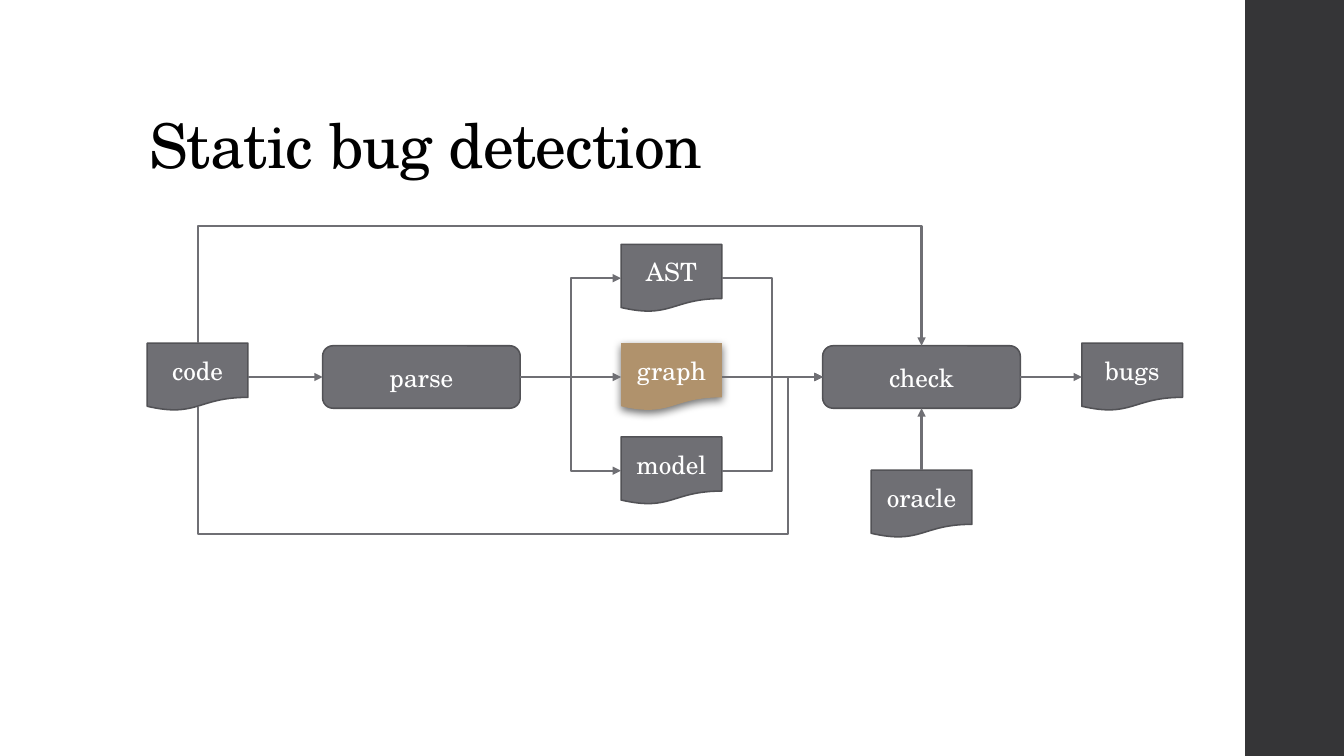
from pptx import Presentation
from pptx.dml.color import RGBColor
from pptx.enum.shapes import MSO_CONNECTOR, MSO_SHAPE
from pptx.enum.text import MSO_ANCHOR, PP_ALIGN
from pptx.oxml import parse_xml
from pptx.oxml.ns import nsdecls, qn
from pptx.util import Inches, Pt

STRAIGHT, ELBOW = MSO_CONNECTOR.STRAIGHT, MSO_CONNECTOR.ELBOW
DOCUMENT, PROCESS = MSO_SHAPE.FLOWCHART_DOCUMENT, MSO_SHAPE.ROUNDED_RECTANGLE
BAND = MSO_SHAPE.RECTANGLE
CENTER, MIDDLE, BOTTOM_ANCHOR = PP_ALIGN.CENTER, MSO_ANCHOR.MIDDLE, MSO_ANCHOR.BOTTOM
TOP, LEFT, BOTTOM, RIGHT = range(4)

FONT = "TeX Gyre Schola"
COLORS = {"band": "353537", "node": "6F6F74", "outline": "525256",
          "highlight": "B0926C", "title": "000000", "label": "FFFFFF"}

# Centres of the diagram's columns and rows, and node sizes, in inches
COLUMNS = {"source": 1.96, "parser": 4.18, "forms": 6.66, "checker": 9.14, "result": 11.23}
ROWS = {"detour above": 2.24, "upper": 2.76, "main": 3.74, "lower": 4.67,
        "oracle": 5.0, "detour below": 5.3}
SIZES = {DOCUMENT: (1, 0.67), PROCESS: (1.96, 0.62)}
DETOUR_TURN = 7.82

# Label, shape, column, row
NODES = [
    ("code", DOCUMENT, "source", "main"),
    ("parse", PROCESS, "parser", "main"),
    ("AST", DOCUMENT, "forms", "upper"),
    ("graph", DOCUMENT, "forms", "main"),
    ("model", DOCUMENT, "forms", "lower"),
    ("check", PROCESS, "checker", "main"),
    ("oracle", DOCUMENT, "checker", "oracle"),
    ("bugs", DOCUMENT, "result", "main"),
]

# Start node, its side, end node, its side, connector kind
LINKS = [
    ("code", RIGHT, "parse", LEFT, STRAIGHT),
    ("parse", RIGHT, "AST", LEFT, ELBOW),
    ("parse", RIGHT, "graph", LEFT, STRAIGHT),
    ("parse", RIGHT, "model", LEFT, ELBOW),
    ("AST", RIGHT, "check", LEFT, ELBOW),
    ("graph", RIGHT, "check", LEFT, STRAIGHT),
    ("model", RIGHT, "check", LEFT, ELBOW),
    ("oracle", TOP, "check", BOTTOM, STRAIGHT),
    ("check", RIGHT, "bugs", LEFT, STRAIGHT),
]


def rgb(name):
    return RGBColor.from_string(COLORS[name])


def add_run(paragraph, text, size, color):
    run = paragraph.add_run()
    run.text = text
    run.font.name = FONT
    run.font.size = Pt(size)
    run.font.color.rgb = rgb(color)
    return run


def add_title(slide, text):
    box = slide.shapes.add_textbox(Inches(1.38), Inches(0.4), Inches(10.6), Inches(1.45))
    frame = box.text_frame
    frame.word_wrap = True
    frame.vertical_anchor = BOTTOM_ANCHOR
    paragraph = frame.paragraphs[0]
    paragraph.line_spacing = 0.9
    run = add_run(paragraph, text, 44, "title")
    run.font._element.set("spc", "-50")


def add_band(slide, presentation):
    band = slide.shapes.add_shape(BAND, Inches(12.35), 0, Inches(1), presentation.slide_height)
    band.width = presentation.slide_width - band.left
    band.shadow.inherit = False
    band.fill.solid()
    band.fill.fore_color.rgb = rgb("band")
    band.line.fill.background()


def add_node(slide, label, kind, column, row):
    width, height = SIZES[kind]
    shape = slide.shapes.add_shape(
        kind, Inches(COLUMNS[column] - width / 2), Inches(ROWS[row] - height / 2),
        Inches(width), Inches(height))
    shape.shadow.inherit = False
    shape.fill.solid()
    shape.fill.fore_color.rgb = rgb("node")
    shape.line.color.rgb = rgb("outline")
    shape.line.width = Pt(1.1)
    frame = shape.text_frame
    frame.vertical_anchor = MIDDLE
    frame.paragraphs[0].alignment = CENTER
    add_run(frame.paragraphs[0], label, 18, "label")
    return shape


def highlight(shape):
    shape.fill.fore_color.rgb = rgb("highlight")
    shape.line.fill.background()
    effects = shape._element.spPr.find(qn("a:effectLst"))
    effects.append(parse_xml(
        f'<a:outerShdw {nsdecls("a")} blurRad="{Pt(6)}" dist="{Pt(2)}" dir="5400000" '
        'rotWithShape="0"><a:srgbClr val="000000"><a:alpha val="55000"/></a:srgbClr>'
        '</a:outerShdw>'))


def style_arrow(shape):
    shape.line.color.rgb = rgb("node")
    shape.line.width = Pt(1.5)
    shape.line._get_or_add_ln().append(
        parse_xml(f'<a:tailEnd {nsdecls("a")} type="triangle"/>'))


def add_link(slide, start, start_side, end, end_side, kind):
    link = slide.shapes.add_connector(kind, 0, 0, 0, 0)
    link.begin_connect(start, start_side)
    link.end_connect(end, end_side)
    style_arrow(link)
    link._element.spPr.append(parse_xml(f'<a:effectLst {nsdecls("a")}/>'))


def add_detour(slide, points):
    builder = slide.shapes.build_freeform(*points[0])
    builder.add_line_segments(points[1:], close=False)
    detour = builder.convert_to_shape()
    detour.shadow.inherit = False
    detour.fill.background()
    style_arrow(detour)


def add_detours(slide, code, check):
    code_x = code.left + code.width // 2
    check_x = check.left + check.width // 2
    check_y = check.top + check.height // 2
    above, below = Inches(ROWS["detour above"]), Inches(ROWS["detour below"])
    turn = Inches(DETOUR_TURN)
    code_bottom = code.top + round(code.height * 0.94)  # wavy lower edge
    add_detour(slide, [(code_x, code.top), (code_x, above),
                       (check_x, above), (check_x, check.top)])
    add_detour(slide, [(code_x, code_bottom), (code_x, below), (turn, below),
                       (turn, check_y), (check.left, check_y)])


def main():
    presentation = Presentation()
    presentation.slide_width = Inches(13.33)
    presentation.slide_height = Inches(7.5)
    slide = presentation.slides.add_slide(presentation.slide_layouts[6])

    # Frame of the slide
    add_band(slide, presentation)
    add_title(slide, "Static bug detection")

    # Diagram
    nodes = {node[0]: add_node(slide, *node) for node in NODES}
    highlight(nodes["graph"])
    for start, start_side, end, end_side, kind in LINKS:
        add_link(slide, nodes[start], start_side, nodes[end], end_side, kind)
    add_detours(slide, nodes["code"], nodes["check"])

    presentation.save("out.pptx")


if __name__ == "__main__":
    main()
